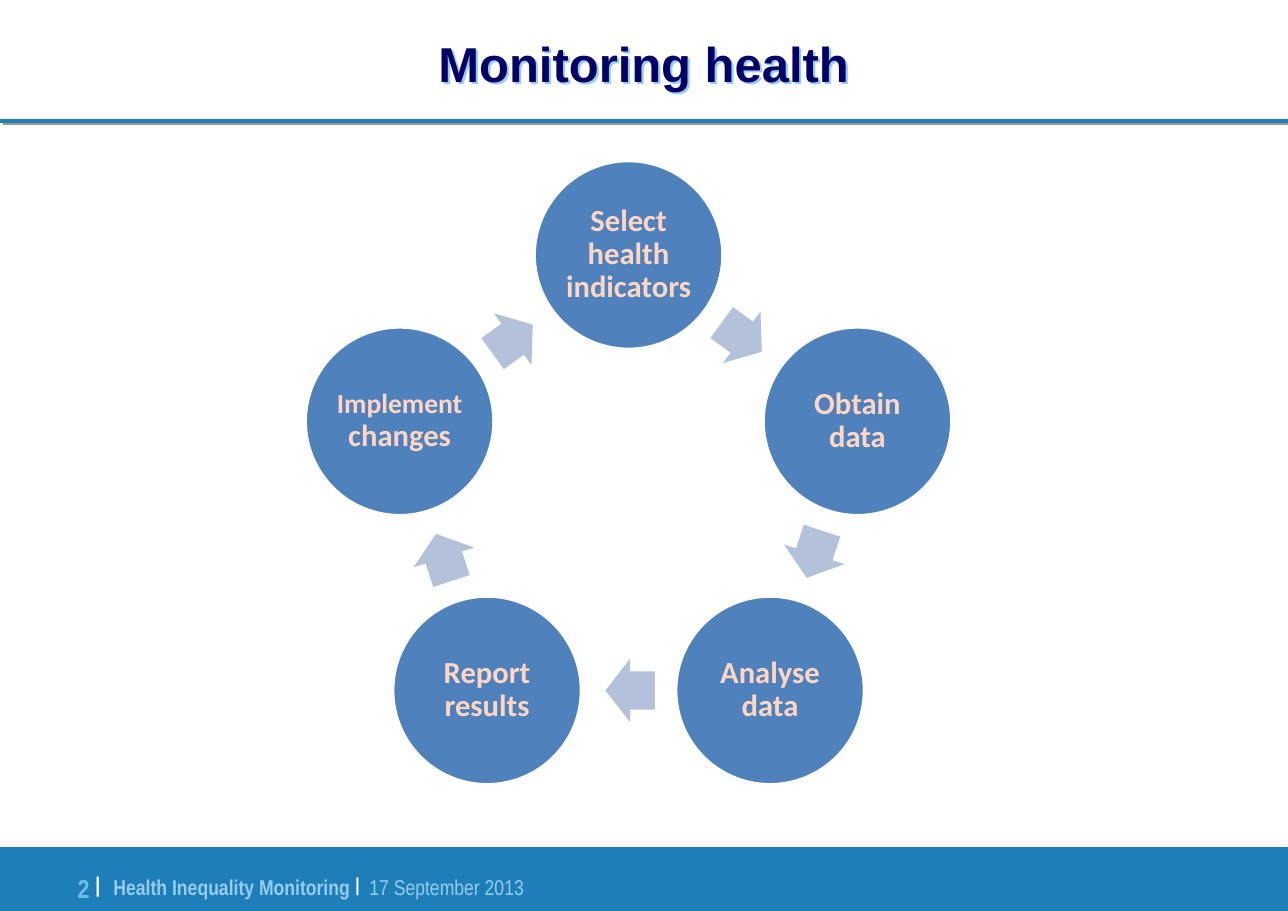
from dataclasses import dataclass
from math import cos, pi, sin

from lxml.etree import SubElement
from pptx import Presentation
from pptx.dml.color import RGBColor
from pptx.enum.shapes import MSO_CONNECTOR, MSO_SHAPE
from pptx.enum.text import MSO_ANCHOR, MSO_AUTO_SIZE, PP_ALIGN
from pptx.oxml.ns import qn
from pptx.util import Emu, Pt

PX = 9144  # 100 px to the inch
WIDE, HIGH = 1169, 827
BLUE = RGBColor(0x1E, 0x7F, 0xB8)
NAVY = RGBColor(0x00, 0x00, 0x66)
DISC = RGBColor(0x4F, 0x81, 0xBD)
ARROW = RGBColor(0xB3, 0xC1, 0xDB)
PEACH = RGBColor(0xFF, 0xD6, 0xC2)
PALE = RGBColor(0x96, 0xCC, 0xEE)
SKY = RGBColor(0x72, 0xBB, 0xE8)
GREY = RGBColor(0x96, 0x96, 0x96)
WHITE = RGBColor(0xFF, 0xFF, 0xFF)

MID_X, MID_Y, RING = 570.5, 450, 218.5
DISC_SIZE = 171
ARROW_W, ARROW_H, ARROW_LAG = 45, 58, 1.5


@dataclass
class Run:
    text: str
    size: float
    color: RGBColor = PEACH
    font: str = "Calibri"
    bold: bool = True
    lift: int = 0
    gap: int = 0


STEPS = [
    [Run("Select health indicators", 20)],
    [Run("Obtain data", 20)],
    [Run("Analyse data", 20)],
    [Run("Report results", 20)],
    [Run("Implement ", 18), Run("changes", 20)],
]
FOOTER = [
    Run("Health Inequality Monitoring ", 14, PALE, "Arial Narrow"),
    Run("|", 21, WHITE, "Arial Narrow", lift=12),
    Run(" ", 14, PALE, "Arial Narrow", gap=320),
    Run("17 September 2013", 14, PALE, "Arial Narrow", bold=False),
]
NUMBER = [
    Run("2 ", 17, SKY, "Arial Narrow"),
    Run("|", 24, WHITE, "Arial Narrow", lift=14),
]


def px(*sizes: float) -> list[Emu]:
    return [Emu(round(size * PX)) for size in sizes]


def write(shape, runs: list[Run], align, anchor=MSO_ANCHOR.TOP, inset: int = 0) -> None:
    frame = shape.text_frame
    frame.word_wrap = True
    frame.auto_size = MSO_AUTO_SIZE.NONE
    frame.vertical_anchor = anchor
    frame.margin_left = frame.margin_right = Emu(inset * PX)
    frame.margin_top = frame.margin_bottom = Emu(inset * PX)
    para = frame.paragraphs[0]
    para.alignment = align
    for item in runs:
        run = para.add_run()
        run.text = item.text
        font = run.font
        font.name, font.size, font.bold = item.font, Pt(item.size), item.bold
        font.color.rgb = item.color
        props = run._r.get_or_add_rPr()
        if item.lift:
            props.set("baseline", str(item.lift * 1000))
        if item.gap:
            props.set("spc", str(item.gap))


def shade(shape, color: RGBColor, dist: float, angle: int) -> None:
    """Add a hard outer shadow."""
    effects = SubElement(shape._element.spPr, qn("a:effectLst"))
    shadow = SubElement(effects, qn("a:outerShdw"), dist=str(Pt(dist)),
                        dir=str(angle * 60000), algn="ctr", rotWithShape="0")
    SubElement(shadow, qn("a:srgbClr"), val=str(color))


def add_shape(slide, kind, box: tuple, fill: RGBColor):
    shape = slide.shapes.add_shape(kind, *px(*box))
    shape.shadow.inherit = False
    shape.fill.solid()
    shape.fill.fore_color.rgb = fill
    shape.line.fill.background()
    return shape


def add_text(slide, box: tuple, runs: list[Run], align) -> None:
    write(slide.shapes.add_textbox(*px(*box)), runs, align)


def spot(turn: float) -> tuple[float, float]:
    """Give the ring point a number of steps clockwise from the top."""
    angle = 2 * pi * turn / len(STEPS)
    return MID_X + RING * sin(angle), MID_Y - RING * cos(angle)


def add_frame(slide) -> None:
    rule = slide.shapes.add_connector(MSO_CONNECTOR.STRAIGHT, *px(0, 110, WIDE, 110))
    rule.line.color.rgb = BLUE
    rule.line.width = Pt(3)
    shade(rule, GREY, 2.2, 27)
    add_shape(slide, MSO_SHAPE.RECTANGLE, (0, 769, WIDE, 58), BLUE)
    add_text(slide, (103, 784, 421, 28), FOOTER, PP_ALIGN.LEFT)
    add_text(slide, (46, 782, 45, 40), NUMBER, PP_ALIGN.RIGHT)


def add_title(slide) -> None:
    title = slide.shapes.title
    title.left, title.top, title.width, title.height = px(0, 0, WIDE, 114)
    write(title, [Run("Monitoring health", 32, NAVY, "Arial")],
          PP_ALIGN.CENTER, MSO_ANCHOR.MIDDLE)
    shade(title, PALE, 2, 45)


def add_step(slide, turn: int, runs: list[Run]) -> None:
    x, y = spot(turn)
    half = DISC_SIZE / 2
    disc = add_shape(slide, MSO_SHAPE.OVAL, (x - half, y - half, DISC_SIZE, DISC_SIZE), DISC)
    disc.line.color.rgb = WHITE
    disc.line.width = Pt(2)
    write(disc, runs, PP_ALIGN.CENTER, MSO_ANCHOR.MIDDLE, 3)
    disc.text_frame.paragraphs[0].line_spacing = 0.9


def add_arrow(slide, turn: int) -> None:
    """Point from one step to the next, just short of halfway."""
    (x1, y1), (x2, y2) = spot(turn), spot(turn + 1)
    angle = 2 * pi * (turn + 0.5) / len(STEPS)
    x = (x1 + x2) / 2 - ARROW_LAG * cos(angle)
    y = (y1 + y2) / 2 - ARROW_LAG * sin(angle)
    box = (x - ARROW_W / 2, y - ARROW_H / 2, ARROW_W, ARROW_H)
    arrow = add_shape(slide, MSO_SHAPE.RIGHT_ARROW, box, ARROW)
    arrow.adjustments[0], arrow.adjustments[1] = 0.6, 0.5
    arrow.rotation = 360 * (turn + 0.5) / len(STEPS)


def main() -> None:
    deck = Presentation()
    deck.slide_width, deck.slide_height = px(WIDE, HIGH)
    slide = deck.slides.add_slide(deck.slide_layouts[5])
    add_frame(slide)
    add_title(slide)
    for turn, runs in enumerate(STEPS):
        add_step(slide, turn, runs)
        add_arrow(slide, turn)
    deck.save("out.pptx")


if __name__ == "__main__":
    main()
